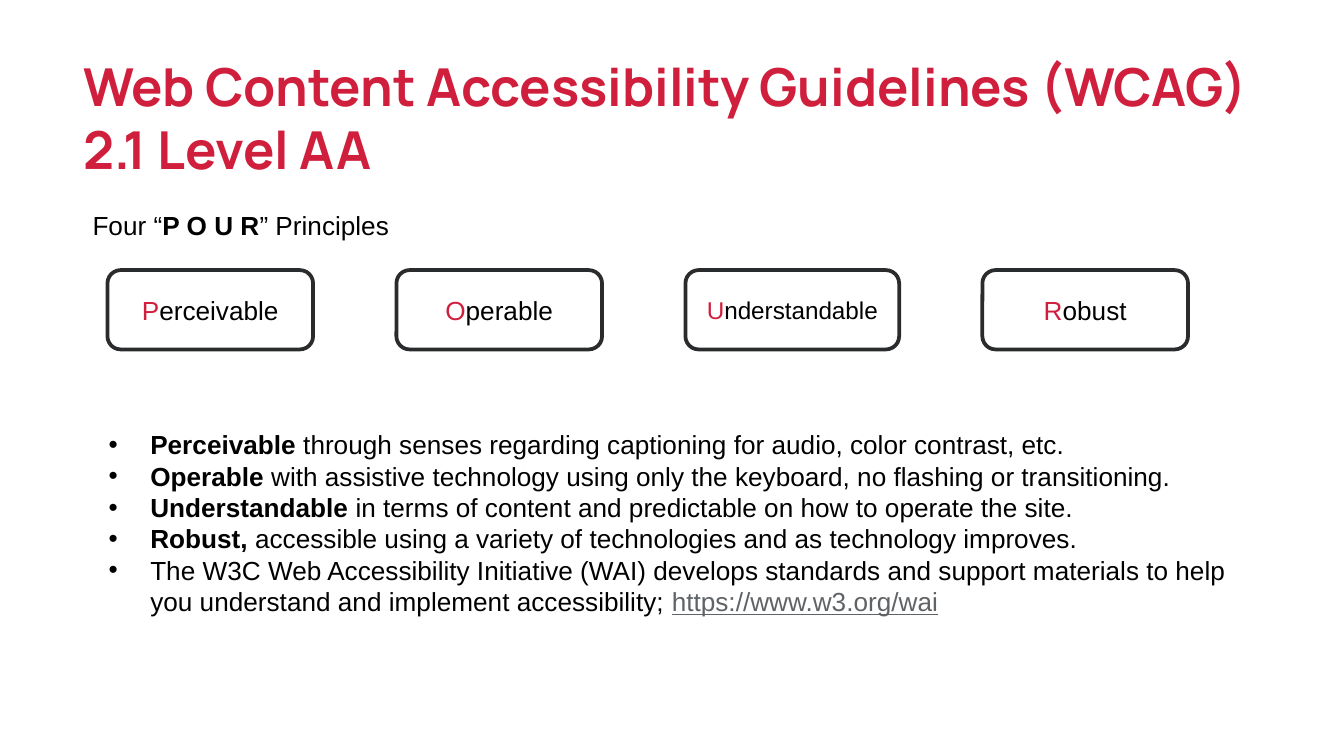
"""Build the slide on the four WCAG principles."""
from dataclasses import dataclass
from typing import NamedTuple

from lxml import etree
from pptx import Presentation, util as u
from pptx.dml.color import RGBColor
from pptx.enum import shapes, text
from pptx.oxml.ns import qn


@dataclass(frozen=True)
class Theme:
    red: str = "D01F3D"
    ink: str = "000000"
    edge: str = "2A2B2D"
    link: str = "606366"
    paper: str = "FFFFFF"
    head: str = "Manrope"
    body: str = "Arial"
    title: float = 28
    size: float = 14
    small: float = 13
    rule: float = 2


class Box(NamedTuple):
    col: float
    row: float
    wide: float
    high: float


class Part(NamedTuple):
    words: str
    color: str = Theme.ink
    bold: bool = False
    under: bool = False


class Card(NamedTuple):
    word: str
    wide: float = 15.3
    size: float = Theme.size


T = Theme()
WIDTH = u.Inches(10)
HEIGHT = WIDTH * 9 // 16
UNIT = WIDTH // 100
GAP = 6.2
TITLE = Box(5.2, 3.05, 89.6, 15.9)
LEAD = Box(5.9, 15.05, 86.1, 3.35)
ROW = Box(8, 20.1, 0, 5.9)
LIST = Box(7.1, 31.4, 86.1, 15.1)

CARDS = [
    Card("Perceivable"),
    Card("Operable"),
    Card("Understandable", 15.9, T.small),
    Card("Robust"),
]
INTRO = [Part("Four “"), Part("P O U R", bold=True), Part("” Principles")]
POINTS = [
    ("Perceivable", " through senses regarding captioning for audio, color contrast, etc."),
    ("Operable", " with assistive technology using only the keyboard, no flashing or transitioning."),
    ("Understandable", " in terms of content and predictable on how to operate the site."),
    ("Robust,", " accessible using a variety of technologies and as technology improves."),
]
SOURCE = [
    Part("The W3C Web Accessibility Initiative (WAI) develops standards and support "
         "materials to help you understand and implement accessibility; "),
    Part("https://www.w3.org/wai", T.link, under=True),
]


def rgb(code: str) -> RGBColor:
    return RGBColor.from_string(code)


def place(box: Box) -> list[int]:
    return [round(n * UNIT) for n in box]


def style(font, color: str, size: float, face: str = T.body, bold: bool = False) -> None:
    font.name, font.size, font.bold = face, u.Pt(size), bold
    font.color.rgb = rgb(color)


def write(para, parts: list[Part], size: float = T.size) -> None:
    for part in parts:
        run = para.add_run()
        run.text = part.words
        style(run.font, part.color, size, bold=part.bold)
        run.font.underline = part.under


def bullet(para) -> None:
    props = para._p.get_or_add_pPr()
    hang = u.Inches(0.31)
    props.set("marL", str(hang))
    props.set("indent", str(-hang))
    tint = etree.SubElement(props, qn("a:buClr"))
    etree.SubElement(tint, qn("a:srgbClr"), val=T.ink)
    etree.SubElement(props, qn("a:buFont"), typeface=T.body)
    etree.SubElement(props, qn("a:buChar"), char="•")


def head(slide) -> None:
    shape = slide.shapes.title
    shape.left, shape.top, shape.width, shape.height = place(TITLE)
    frame = shape.text_frame
    frame.text = "Web Content Accessibility Guidelines (WCAG) 2.1 Level AA"
    frame.auto_size = text.MSO_AUTO_SIZE.NONE
    frame.vertical_anchor = text.MSO_ANCHOR.TOP
    frame.margin_left = frame.margin_right = UNIT
    frame.margin_top = frame.margin_bottom = UNIT
    para = frame.paragraphs[0]
    para.alignment = text.PP_ALIGN.LEFT
    style(para.runs[0].font, T.red, T.title, T.head, True)


def block(slide, box: Box, rows: list[list[Part]], marks: bool = False) -> None:
    frame = slide.shapes.add_textbox(*place(box)).text_frame
    frame.word_wrap = True
    for i, parts in enumerate(rows):
        para = frame.add_paragraph() if i else frame.paragraphs[0]
        if marks:
            bullet(para)
        write(para, parts)


def tile(slide, card: Card, col: float) -> None:
    box = ROW._replace(col=col, wide=card.wide)
    shape = slide.shapes.add_shape(shapes.MSO_SHAPE.ROUNDED_RECTANGLE, *place(box))
    shape.shadow.inherit = False
    shape.fill.solid()
    shape.fill.fore_color.rgb = rgb(T.paper)
    shape.line.color.rgb = rgb(T.edge)
    shape.line.width = u.Pt(T.rule)
    frame = shape.text_frame
    frame.word_wrap = True
    frame.vertical_anchor = text.MSO_ANCHOR.MIDDLE
    para = frame.paragraphs[0]
    para.alignment = text.PP_ALIGN.CENTER
    write(para, [Part(card.word[0], T.red), Part(card.word[1:])], card.size)


def main() -> None:
    deck = Presentation()
    deck.slide_width, deck.slide_height = WIDTH, HEIGHT
    slide = deck.slides.add_slide(deck.slide_layouts.get_by_name("Title Only"))
    head(slide)
    block(slide, LEAD, [INTRO])
    col = ROW.col
    for card in CARDS:
        tile(slide, card, col)
        col += card.wide + GAP
    rows = [[Part(key, bold=True), Part(rest)] for key, rest in POINTS]
    block(slide, LIST, rows + [SOURCE], marks=True)
    deck.save("out.pptx")


if __name__ == "__main__":
    main()
